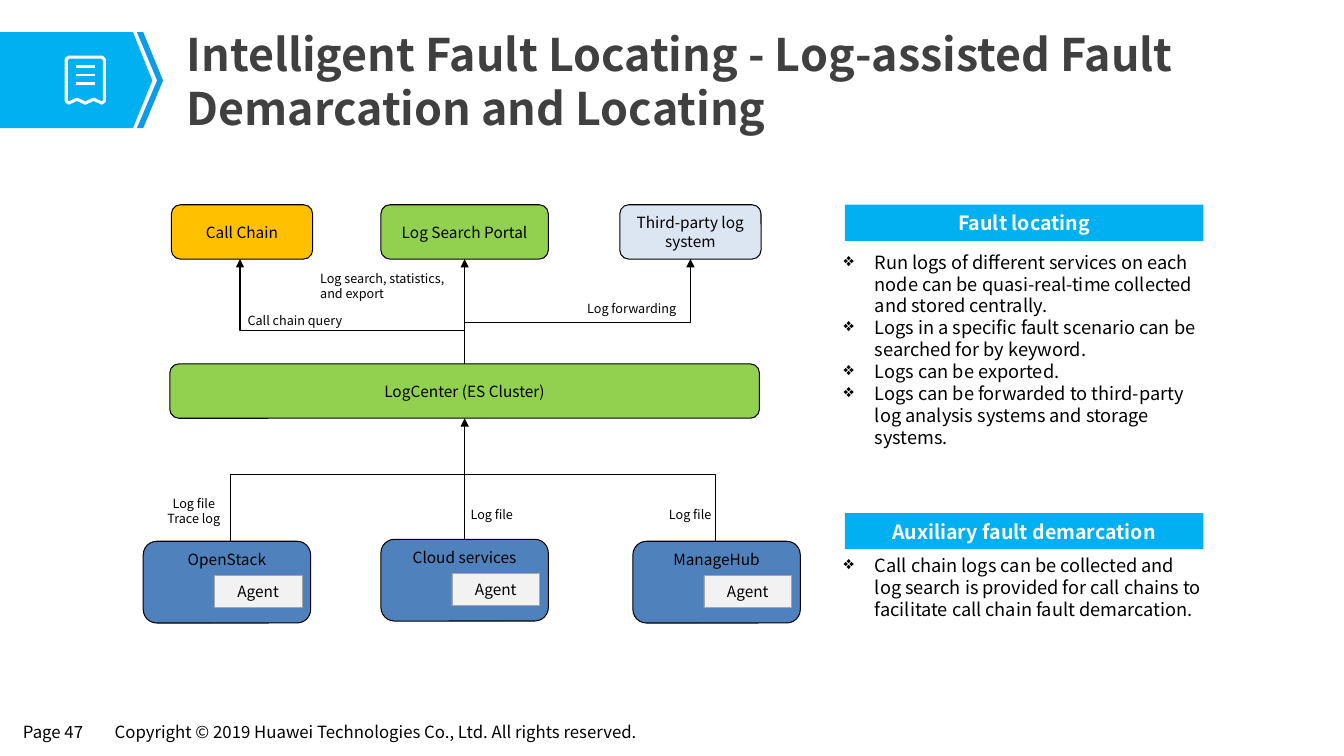
from lxml import etree
from pptx import Presentation
from pptx.dml.color import RGBColor
from pptx.enum import shapes, text
from pptx.oxml.ns import qn
from pptx.util import Cm, Pt

FONT = "Noto Sans CJK SC"
BLACK, WHITE = RGBColor(0, 0, 0), RGBColor(255, 255, 255)
DARK_GREY = RGBColor(0x40, 0x40, 0x40)
CYAN, DEEP_CYAN = RGBColor(0, 0xB0, 0xF0), RGBColor(0x0B, 0x9C, 0xE5)
AMBER, GREEN = RGBColor(0xFF, 0xC0, 0), RGBColor(0x92, 0xD0, 0x50)
PALE_BLUE, BLUE = RGBColor(0xDC, 0xE6, 0xF2), RGBColor(0x4F, 0x81, 0xBD)
PALE_GREY, GREY = RGBColor(0xF2, 0xF2, 0xF2), RGBColor(0xA5, 0xA5, 0xA5)
LEFT, CENTER = text.PP_ALIGN.LEFT, text.PP_ALIGN.CENTER
TOP, MIDDLE = text.MSO_ANCHOR.TOP, text.MSO_ANCHOR.MIDDLE
RECT, ROUND = shapes.MSO_SHAPE.RECTANGLE, shapes.MSO_SHAPE.ROUNDED_RECTANGLE
STRAIGHT, ELBOW = shapes.MSO_CONNECTOR.STRAIGHT, shapes.MSO_CONNECTOR.ELBOW

# All lengths are in centimetres.
TITLE = "Intelligent Fault Locating - Log-assisted Fault Demarcation and Locating"
FOOTERS = [
    ("Page 47", 0.33, 2.13),
    ("Copyright © 2019 Huawei Technologies Co., Ltd. All rights reserved.", 2.64, 14.25),
]
BANNER = [(0, 0.81), (3.35, 0.81), (3.84, 2.03), (3.35, 3.23), (0, 3.23)]
CHEVRON = [(3.45, 0.81), (3.61, 0.81), (4.11, 2.03), (3.61, 3.23), (3.45, 3.23), (3.96, 2.03)]
RECEIPT = [(1.73, 1.44), (2.57, 1.44), (2.63, 1.5), (2.63, 2.55), (2.57, 2.6), (2.36, 2.5),
           (2.15, 2.6), (1.94, 2.5), (1.73, 2.6), (1.67, 2.55), (1.67, 1.5)]
RECEIPT_LINES = [1.68, 1.89, 2.1]

PANELS = [  # heading, heading top, body top, body height, bullets
    ("Fault locating", 5.16, 6.2, 10.57, [
        "Run logs of different services on each node can be quasi-real-time collected "
        "and stored centrally.",
        "Logs in a specific fault scenario can be searched for by keyword.",
        "Logs can be exported.",
        "Logs can be forwarded to third-party log analysis systems and storage systems.",
    ]),
    ("Auxiliary fault demarcation", 12.93, 13.84, 3.58, [
        "Call chain logs can be collected and log search is provided for call chains "
        "to facilitate call chain fault demarcation.",
    ]),
]
CONSUMERS = [  # label, left, width, fill
    ("Call Chain", 4.32, 3.56, AMBER),
    ("Log Search Portal", 9.6, 4.22, GREEN),
    ("Third-party log system", 15.62, 3.56, PALE_BLUE),
]
SOURCES = [("OpenStack", 3.61, 13.64), ("Cloud services", 9.6, 13.59), ("ManageHub", 15.95, 13.64)]
TRUNK_X = 11.71
BRANCHES = [  # height on the trunk, end, line width, arrowhead
    (11.96, (18.03, 13.64), 0.5, False),
    (11.96, (5.82, 13.64), 0.75, False),
    (8.33, (6.05, 6.53), 0.75, True),
    (8.13, (17.4, 6.53), 0.75, True),
]
LABELS = [  # lines, left, top, width, height, alignment
    (["Log file", "Trace log"], 3.78, 12.37, 2.21, 1.02, CENTER),
    (["Log file"], 11.61, 12.65, 2.21, 0.64, LEFT),
    (["Log file"], 16.61, 12.65, 2.21, 0.64, LEFT),
    (["Log forwarding"], 14.55, 7.47, 3.02, 1.02, LEFT),
    (["Call chain query"], 5.99, 7.75, 3.61, 0.64, LEFT),
    (["Log search, statistics, and export"], 7.82, 6.71, 4.09, 1.02, LEFT),
]


def write(shape, lines, size, color=BLACK, bold=False, align=LEFT, anchor=TOP, bullet=None):
    frame = shape.text_frame
    frame.word_wrap = True
    frame.vertical_anchor = anchor
    frame.text = "\n".join(lines)
    for para in frame.paragraphs:
        if bullet:
            props = para._p.get_or_add_pPr()
            props.set("marL", str(Cm(0.79)))
            props.set("indent", str(-Cm(0.79)))
            etree.SubElement(props, qn("a:buChar")).set("char", bullet)
        para.alignment = align
        for span in para.runs:
            font = span.font
            font.name, font.size, font.bold = FONT, Pt(size), bold
            font.color.rgb = color


def set_margins(shape, side, end):
    frame = shape.text_frame
    frame.margin_left = frame.margin_right = Cm(side)
    frame.margin_top = frame.margin_bottom = Cm(end)


def paint(shape, fill=None, line=None, width=0.75):
    shape.shadow.inherit = False
    if fill is None:
        shape.fill.background()
    else:
        shape.fill.solid()
        shape.fill.fore_color.rgb = fill
    if line is None:
        shape.line.fill.background()
    else:
        shape.line.color.rgb = line
        shape.line.width = Pt(width)


def add_box(kind, area, label, size=11, fill=None, line=BLACK, width=0.75, **style):
    box = slide.shapes.add_shape(kind, *map(Cm, area))
    paint(box, fill, line, width)
    write(box, [label], size, align=CENTER, **style)
    return box


def add_text(area, lines, size, **style):
    box = slide.shapes.add_textbox(*map(Cm, area))
    write(box, lines, size, **style)
    return box


def add_outline(points, **look):
    start, *rest = [(Cm(x), Cm(y)) for x, y in points]
    builder = slide.shapes.build_freeform(*start)
    builder.add_line_segments(rest, close=True)
    paint(builder.convert_to_shape(), **look)


def add_line(kind, begin, end, color=BLACK, width=0.75, arrow=False):
    line = slide.shapes.add_connector(kind, *map(Cm, (*begin, *end)))
    line.line.color.rgb = color
    line.line.width = Pt(width)
    props = line._element.spPr
    if kind == ELBOW:  # a single bend: sideways first, then up or down
        props.find(qn("a:prstGeom")).set("prst", "bentConnector2")
    if arrow:
        etree.SubElement(line.line._get_or_add_ln(), qn("a:tailEnd")).set("type", "triangle")
    etree.SubElement(props, qn("a:effectLst"))
    return line


deck = Presentation()
deck.slide_width, deck.slide_height = Cm(33.87), Cm(19.05)
slide = deck.slides.add_slide(deck.slide_layouts[5])

for footer, left, width in FOOTERS:
    add_text((left, 18.06, width, 0.74), [footer], 12)
add_outline(BANNER, fill=CYAN)
add_outline(CHEVRON, fill=DEEP_CYAN)
add_outline(RECEIPT, line=WHITE, width=2.25)
for y in RECEIPT_LINES:
    add_line(STRAIGHT, (1.92, y), (2.4, y), WHITE, 1.75)

title = slide.shapes.title
title.left, title.top, title.width, title.height = map(Cm, (4.42, 0.53, 27.31, 1.78))
write(title, [TITLE], 32, DARK_GREY, bold=True)
title.text_frame.auto_size = text.MSO_AUTO_SIZE.NONE
set_margins(title, 0.28, 0.15)

for heading, heading_top, body_top, body_height, bullets in PANELS:
    bar = add_box(RECT, (21.29, heading_top, 9.04, 0.91), heading, 14, CYAN, None,
                  color=WHITE, bold=True, anchor=MIDDLE)
    set_margins(bar, 0, 0)
    add_text((21.01, body_top, 9.5, body_height), bullets, 13, bullet="❖")

consumers = [add_box(ROUND, (left, 5.16, width, 1.37), label, fill=fill, anchor=MIDDLE)
             for label, left, width, fill in CONSUMERS]
log_center = add_box(ROUND, (4.28, 9.17, 14.86, 1.37), "LogCenter (ES Cluster)",
                     fill=GREEN, anchor=MIDDLE)
sources = []
for label, left, top in SOURCES:
    sources.append(add_box(ROUND, (left, top, 4.22, 2.06), label, fill=BLUE))
    agent = add_box(RECT, (left + 1.79, top + 0.86, 2.21, 0.81), "Agent",
                    fill=PALE_GREY, line=GREY, width=0.5, anchor=MIDDLE)
    set_margins(agent, 0.3, 0.15)

for trunk_y, end, width, arrow in BRANCHES:
    add_line(ELBOW, (TRUNK_X, trunk_y), end, width=width, arrow=arrow)
for lower, upper, y1, y2 in [(log_center, consumers[1], 9.17, 6.53),
                             (sources[1], log_center, 13.59, 10.54)]:
    trunk = add_line(STRAIGHT, (TRUNK_X, y1), (TRUNK_X, y2), arrow=True)
    trunk.begin_connect(lower, 0)
    trunk.end_connect(upper, 2)
for lines, *area, align in LABELS:
    add_text(area, lines, 9, align=align)

deck.save("out.pptx")
